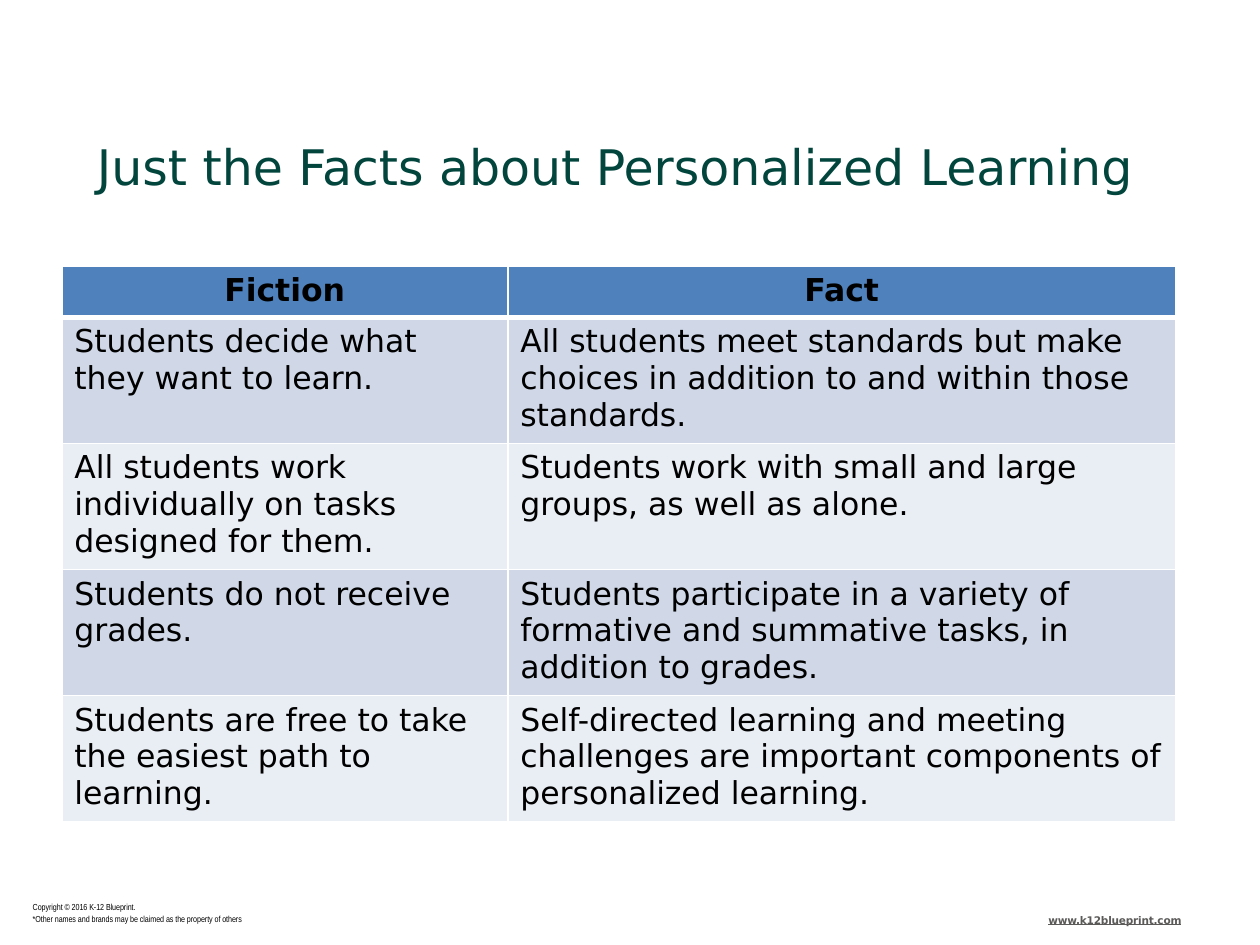
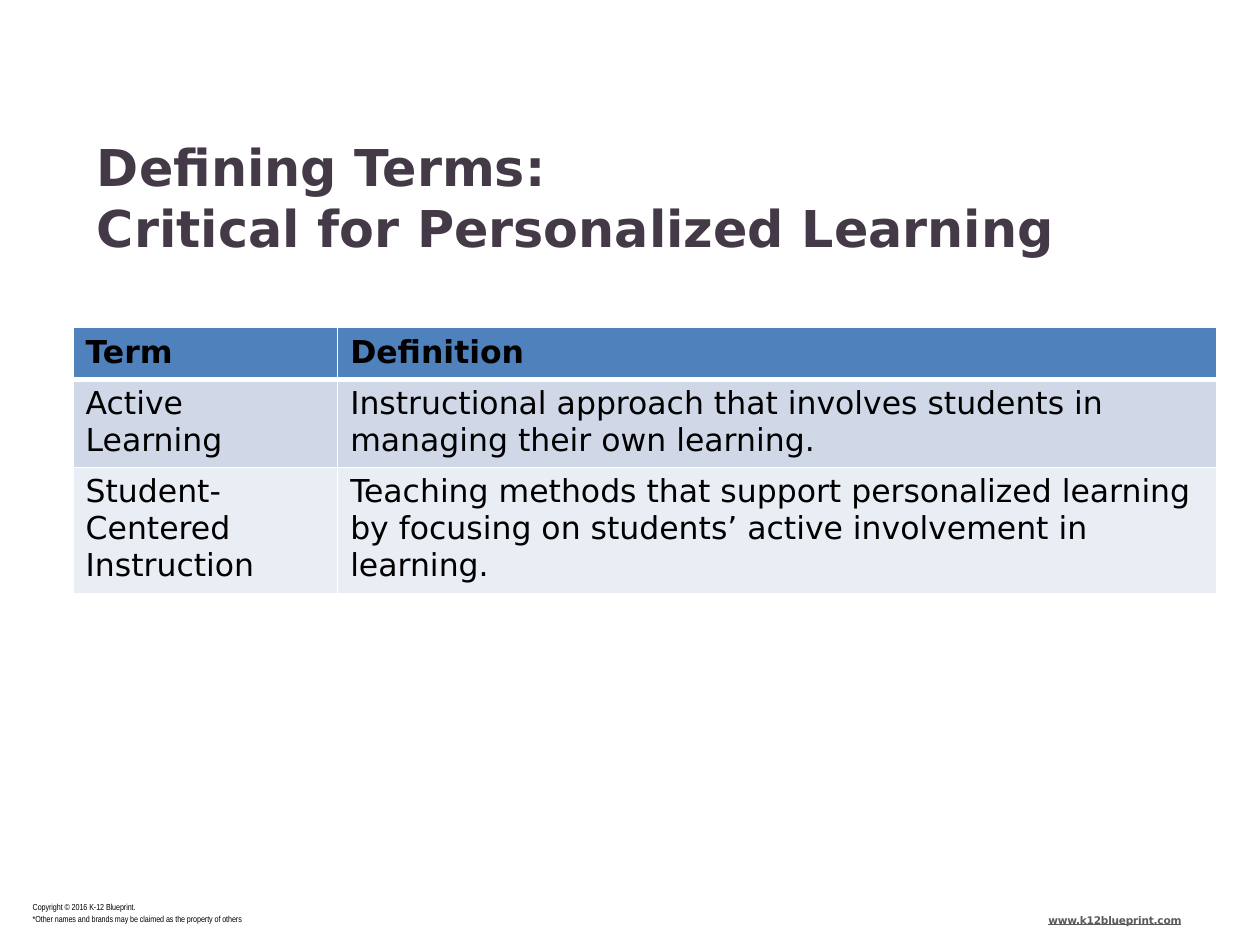
from lxml.etree import SubElement
from pptx import Presentation
from pptx.dml.color import RGBColor
from pptx.enum.text import MSO_AUTO_SIZE as AutoSize, PP_ALIGN as Align
from pptx.oxml.ns import qn
from pptx.util import Inches, Pt

COLORS = {
    "green": "01453D",
    "plum": "443947",
    "black": "000000",
    "grey": "5B5A59",
    "white": "FFFFFF",
    "header": "4F81BD",
    "odd": "D0D8E8",
    "even": "E9EDF4",
}
FONT = "DejaVu Sans"
HEADER_HEIGHT = 0.41

FACTS = [
    ("Fiction", "Fact"),
    ("Students decide what they want to learn.",
     "All students meet standards but make choices in addition to and within those standards."),
    ("All students work individually on tasks designed for them.",
     "Students work with small and large groups, as well as alone."),
    ("Students do not receive grades.",
     "Students participate in a variety of formative and summative tasks, in addition to grades."),
    ("Students are free to take the easiest path to learning.",
     "Self-directed learning and meeting challenges are important components of personalized learning."),
]
TERMS = [
    ("Term", "Definition"),
    ("Active Learning",
     "Instructional approach that involves students in managing their own learning."),
    ("Student-Centered Instruction",
     "Teaching methods that support personalized learning by focusing on students’ active involvement in learning."),
]


def color(name):
    return RGBColor.from_string(COLORS[name])


def write(para, text, size=18, font=FONT, ink="black", bold=False, underline=False,
          align=Align.LEFT, leading=None, indent=0, tracking=0):
    para.text = text
    para.alignment = align
    if leading:
        para.line_spacing = Pt(leading)
    if indent:
        para._p.get_or_add_pPr().set("marL", str(Inches(indent)))
    for span in para.runs:
        span.font.size = Pt(size)
        span.font.name = font
        span.font.bold = bold
        span.font.underline = underline
        span.font.color.rgb = color(ink)
        if tracking:
            span._r.get_or_add_rPr().set("spc", str(round(tracking * 100)))


def add_text(page, left, top, width, height, lines, **style):
    box = page.shapes.add_textbox(Inches(left), Inches(top), Inches(width), Inches(height))
    frame = box.text_frame
    frame.word_wrap = True
    frame.auto_size = AutoSize.SHAPE_TO_FIT_TEXT
    frame.margin_left = frame.margin_top = frame.margin_right = frame.margin_bottom = 0
    for index, line in enumerate(lines):
        para = frame.add_paragraph() if index else frame.paragraphs[0]
        write(para, line, **style)


def add_title(page, text, **style):
    add_text(page, 0.77, 1.08, 8.47, 0.48, [text], **style)


def add_footer(page):
    add_text(page, 0.25, 7.14, 2.17, 0.2,
             ["Copyright © 2016 K-12 Blueprint.",
              "*Other names and brands may be claimed as the property of others"],
             size=5, font="Arial Narrow", leading=7.1, indent=0.01, tracking=-0.05)
    add_text(page, 8.31, 7.25, 1.31, 0.12, ["www.k12blueprint.com"],
             size=6, ink="grey", bold=True, underline=True, indent=0.01, tracking=-0.1)


def add_borders(cell, top, bottom):
    properties = cell._tc.get_or_add_tcPr()
    for side, weight in (("L", 1), ("R", 1), ("T", top), ("B", bottom)):
        line = SubElement(properties, qn(f"a:ln{side}"), w=str(Pt(weight)))
        fill = SubElement(line, qn("a:solidFill"))
        SubElement(fill, qn("a:srgbClr"), val=COLORS["white"])


def add_grid(page, left, top, widths, body_heights, rows, header_align=Align.LEFT):
    heights = [HEADER_HEIGHT, *body_heights]
    table = page.shapes.add_table(
        len(rows), len(widths), Inches(left), Inches(top),
        Inches(sum(widths)), Inches(sum(heights))).table
    table.horz_banding = False
    for column, width in zip(table.columns, widths):
        column.width = Inches(width)
    for number, (row, height, texts) in enumerate(zip(table.rows, heights, rows)):
        row.height = Inches(height)
        is_header = number == 0
        band = "header" if is_header else "odd" if number % 2 else "even"
        for cell, text in zip(row.cells, texts):
            write(cell.text_frame.paragraphs[0], text, bold=is_header,
                  align=header_align if is_header else Align.LEFT)
            add_borders(cell, top=3 if number == 1 else 1, bottom=3 if is_header else 1)
            cell.fill.solid()
            cell.fill.fore_color.rgb = color(band)


def add_page(deck):
    page = deck.slides.add_slide(deck.slide_layouts[6])
    add_footer(page)
    return page


def main():
    deck = Presentation()
    deck.slide_width, deck.slide_height = Inches(10), Inches(7.5)

    facts = add_page(deck)
    add_title(facts, "Just the Facts about Personalized Learning", size=28, ink="green")
    add_grid(facts, 0.49, 2.11, [3.54, 5.3], [0.97] * 4, FACTS, header_align=Align.CENTER)

    terms = add_page(deck)
    add_title(terms, "Defining Terms: \vCritical for Personalized Learning",
              size=29, ink="plum", bold=True)
    add_grid(terms, 0.58, 2.6, [2.1, 6.98], [0.68, 0.97], TERMS)

    deck.save("out.pptx")


if __name__ == "__main__":
    main()
